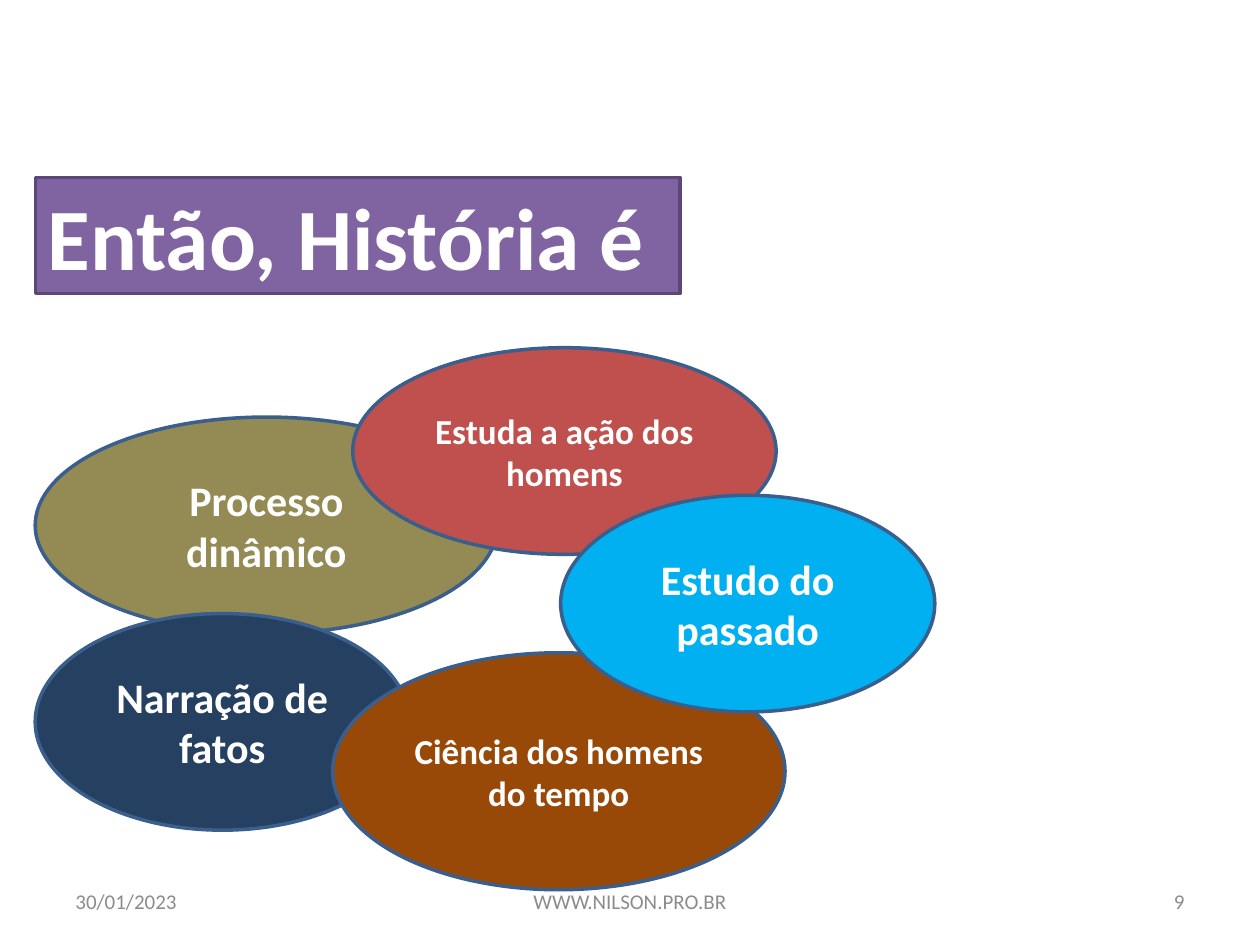
from dataclasses import dataclass

import pptx
import pptx.dml.color
import pptx.enum.shapes
import pptx.enum.text
import pptx.util

Pt = pptx.util.Pt
RGB = pptx.dml.color.RGBColor
Shape = pptx.enum.shapes.MSO_SHAPE
Align = pptx.enum.text.PP_ALIGN


@dataclass(frozen=True)
class Theme:
    font: str = "Calibri"
    white: str = "FFFFFF"
    muted: str = "8C8C8C"
    title_fill: str = "8064A2"
    title_line: str = "5C4776"
    oval_line: str = "3A5F8C"
    olive: str = "948A54"
    navy: str = "254061"
    red: str = "C0504D"
    brown: str = "984807"
    sky: str = "00B0F0"
    title_size: int = 50
    large: int = 24
    medium: int = 20
    small: int = 12
    line_width: int = 2


@dataclass(frozen=True)
class Box:
    left: float
    top: float
    width: float
    height: float

    def lengths(self) -> tuple:
        return Pt(self.left), Pt(self.top), Pt(self.width), Pt(self.height)


@dataclass(frozen=True)
class Oval:
    text: str
    box: Box
    fill: str
    size: int


@dataclass(frozen=True)
class Footer:
    text: str
    left: float
    width: float
    align: Align


THEME = Theme()
TITLE_BOX = Box(20.16, 101.5, 368.6, 66.2)
FOOTER_TOP, FOOTER_HEIGHT = 500.5, 28.75

OVALS = [
    Oval("Processo dinâmico", Box(20.16, 238.3, 264.2, 123.8), THEME.olive, THEME.large),
    Oval("Narração de fatos", Box(20.16, 350.6, 213.8, 123.8), THEME.navy, THEME.large),
    Oval("Estuda a ação dos homens", Box(201.6, 198.7, 241.9, 118.1), THEME.red, THEME.medium),
    Oval("Ciência dos homens do tempo", Box(190.1, 373, 258.5, 135.4), THEME.brown, THEME.medium),
    Oval("Estudo do passado", Box(320.4, 283, 213.8, 123.8), THEME.sky, THEME.large),
]

FOOTERS = [
    Footer("30/01/2023", 36, 168, Align.LEFT),
    Footer("WWW.NILSON.PRO.BR", 246, 228, Align.CENTER),
    Footer("9", 516, 168, Align.RIGHT),
]


def write(sp, text: str, size: int, color: str, align: Align, bold: bool) -> None:
    tf = sp.text_frame
    tf.word_wrap = True
    tf.vertical_anchor = pptx.enum.text.MSO_ANCHOR.MIDDLE
    p = tf.paragraphs[0]
    p.text = text
    p.alignment = align
    p.font.name = THEME.font
    p.font.size = Pt(size)
    p.font.bold = bold
    p.font.color.rgb = RGB.from_string(color)


def add_filled(s, kind: Shape, box: Box, fill: str, line: str):
    sp = s.shapes.add_shape(kind, *box.lengths())
    sp.shadow.inherit = False
    sp.fill.solid()
    sp.fill.fore_color.rgb = RGB.from_string(fill)
    sp.line.color.rgb = RGB.from_string(line)
    sp.line.width = Pt(THEME.line_width)
    return sp


def add_title(s, text: str) -> None:
    sp = add_filled(s, Shape.RECTANGLE, TITLE_BOX, THEME.title_fill, THEME.title_line)
    write(sp, text, THEME.title_size, THEME.white, Align.LEFT, True)


def add_oval(s, oval: Oval) -> None:
    sp = add_filled(s, Shape.OVAL, oval.box, oval.fill, THEME.oval_line)
    write(sp, oval.text, oval.size, THEME.white, Align.CENTER, True)


def add_footer(s, footer: Footer) -> None:
    box = Box(footer.left, FOOTER_TOP, footer.width, FOOTER_HEIGHT)
    sp = s.shapes.add_textbox(*box.lengths())
    write(sp, footer.text, THEME.small, THEME.muted, footer.align, False)


def main() -> None:
    prs = pptx.Presentation()
    prs.slide_width, prs.slide_height = Pt(720), Pt(540)
    s = prs.slides.add_slide(prs.slide_layouts[6])
    add_title(s, "Então, História é")
    for oval in OVALS:
        add_oval(s, oval)
    for footer in FOOTERS:
        add_footer(s, footer)
    prs.save("out.pptx")


if __name__ == "__main__":
    main()
